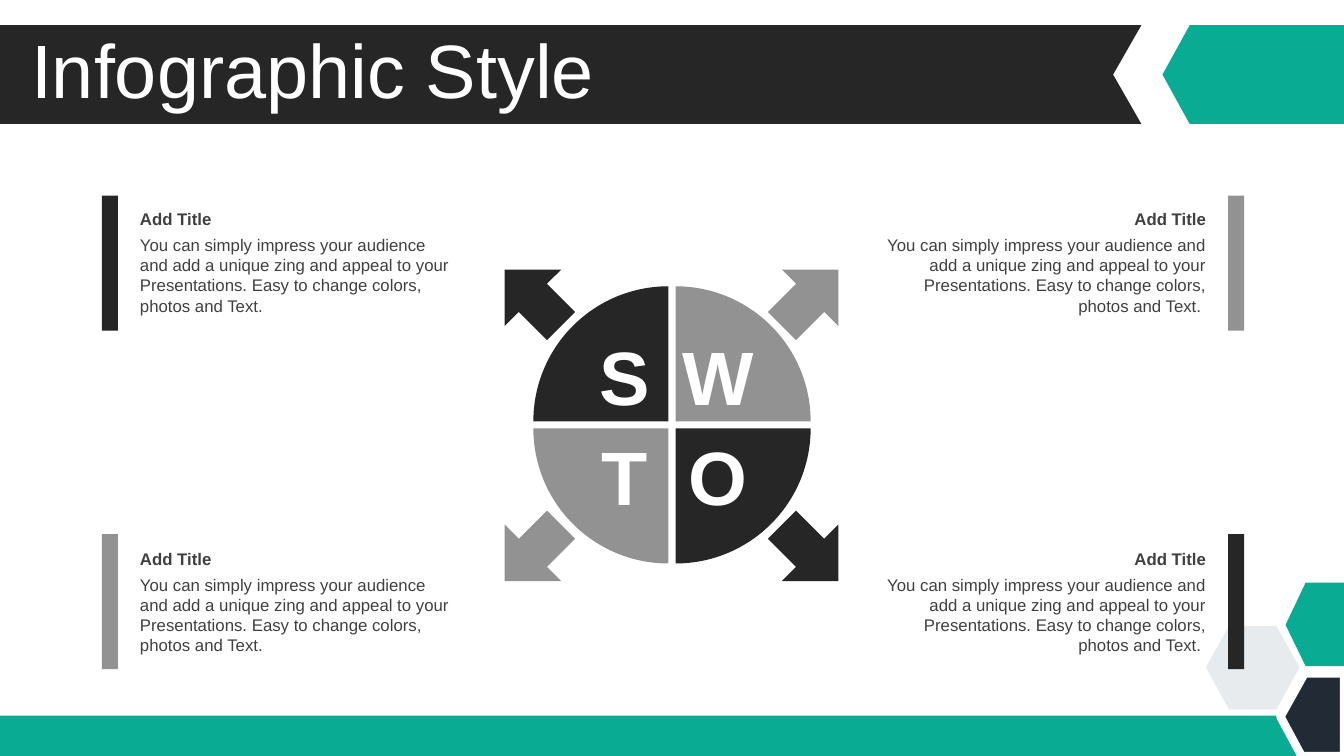
from pptx import Presentation
from pptx import util as u
from pptx.dml.color import RGBColor
from pptx.enum import shapes, text
from pptx.oxml.ns import qn
from lxml import etree

W, H = 13.33, 7.5
COLORS = {"dark": "262626", "grey": "929292", "teal": "09AB93", "pale": "D9DEE2",
          "navy": "222A35", "white": "FFFFFF", "ink": "404040"}
BODY = ("You can simply impress your audience and add a unique zing and appeal to your "
        "Presentations. Easy to change colors, photos and Text.")
QUADRANTS = [("S", 0, 0, "dark"), ("W", 1, 0, "grey"),
             ("O", 1, 1, "dark"), ("T", 0, 1, "grey")]
GRIDS = {"wedge": (5.29, 2.84, 1.41, 1.41), "arrow": (4.89, 2.56, 2.75, 2.53),
         "letter": (5.78, 3.27, 0.92, 0.99), "bar": (1.01, 1.94, 11.17, 3.36),
         "head": (1.29, 2.02, 7.41, 3.37), "body": (1.29, 2.28, 7.41, 3.37)}
OUTLINES = [
    ("dark", [(0, 0.25), (11.32, 0.25), (11.04, 0.74), (11.32, 1.23), (0, 1.23)]),
    ("pale", [(11.96, 6.62), (12.19, 6.21), (12.66, 6.21), (12.89, 6.62),
              (12.66, 7.04), (12.19, 7.04)]),
    ("teal", [(12.95, 5.78), (W, 5.78), (W, 6.61), (12.95, 6.61), (12.75, 6.2)]),
    ("navy", [(W, 6.68), (W, H), (12.91, H), (12.7, 7.11), (12.94, 6.68)]),
    ("teal", [(11.8, 0.25), (W, 0.25), (W, 1.23), (11.8, 1.23), (11.53, 0.74)]),
]


def rgb(name):
    return RGBColor.from_string(COLORS[name])


def cell(grid, col, row):
    x, y, dx, dy = GRIDS[grid]
    return x + col * dx, y + row * dy


def paint(sp, color):
    sp.shadow.inherit = False
    sp.fill.solid()
    sp.fill.fore_color.rgb = rgb(color)
    sp.line.fill.background()
    return sp


def polygon(s, color, points):
    start, *rest = [(u.Inches(x), u.Inches(y)) for x, y in points]
    fb = s.shapes.build_freeform(*start)
    fb.add_line_segments(rest, close=True)
    return paint(fb.convert_to_shape(), color)


def preset(s, kind, at, size, color, turn=0):
    sp = s.shapes.add_shape(kind, *map(u.Inches, (*at, *size)))
    sp.rotation = turn
    return paint(sp, color)


def label(s, words, at, size, points, color, bold=False, inset=None, frame=None, para=None):
    tf = s.shapes.add_textbox(*map(u.Inches, (*at, *size))).text_frame
    p = tf.paragraphs[0]
    r = p.add_run()
    r.text = words
    sides = {} if inset is None else dict.fromkeys(
        ("margin_left", "margin_right", "margin_top", "margin_bottom"), inset)
    formats = [(tf, {"word_wrap": True, **sides, **(frame or {})}), (p, para or {}),
               (r.font, {"name": "Arial", "size": u.Pt(points), "bold": bold})]
    for target, values in formats:
        for key, value in values.items():
            setattr(target, key, value)
    r.font.color.rgb = rgb(color)


def backdrop(s):
    preset(s, shapes.MSO_SHAPE.RECTANGLE, (0, 7.1), (W, 0.4), "teal")
    for color, points in OUTLINES:
        sp = polygon(s, color, points)
        if color == "pale":
            fill = sp._element.spPr.find(qn("a:solidFill"))
            etree.SubElement(fill[0], qn("a:alpha"), val="60000")
        elif color == "navy":
            sp.line.color.rgb = rgb("white")
            sp.line.width = u.Pt(6)


def wheel(s):
    middle = {"vertical_anchor": text.MSO_ANCHOR.MIDDLE}
    for i, (letter, col, row, color) in enumerate(QUADRANTS):
        preset(s, shapes.MSO_SHAPE.PIE_WEDGE, cell("wedge", col, row),
               (1.34, 1.34), color, 90 * i)
        preset(s, shapes.MSO_SHAPE.DOWN_ARROW, cell("arrow", col, row),
               (0.79, 0.79), color, (135 + 90 * i) % 360)
        label(s, letter, cell("letter", col, row), (0.84, 0.91), 54, "white", True, 0,
              middle, {"alignment": text.PP_ALIGN.CENTER})


def notes(s):
    grow = {"auto_size": text.MSO_AUTO_SIZE.SHAPE_TO_FIT_TEXT}
    for _, col, row, color in QUADRANTS:
        para = {"alignment": text.PP_ALIGN.RIGHT if col else text.PP_ALIGN.LEFT}
        width = 3.36 if col else 3.34
        preset(s, shapes.MSO_SHAPE.RECTANGLE, cell("bar", col, row), (0.16, 1.34), color)
        label(s, BODY + " " * col, cell("body", col, row), (width, 0.91), 12, "ink",
              frame=grow, para=para)
        label(s, "Add Title", cell("head", col, row), (width, 0.3), 12, "ink", True,
              frame=grow, para=para)


def main():
    """Build the SWOT wheel slide."""
    prs = Presentation()
    prs.slide_width, prs.slide_height = u.Inches(W), u.Inches(H)
    s = prs.slides.add_slide(prs.slide_layouts[6])
    backdrop(s)
    label(s, "Infographic Style", (0.21, 0.34), (10.53, 0.79), 54, "white",
          frame={"vertical_anchor": text.MSO_ANCHOR.MIDDLE},
          para={"line_spacing": 0.9, "space_before": u.Pt(10)})
    wheel(s)
    notes(s)
    prs.save("out.pptx")


if __name__ == "__main__":
    main()
